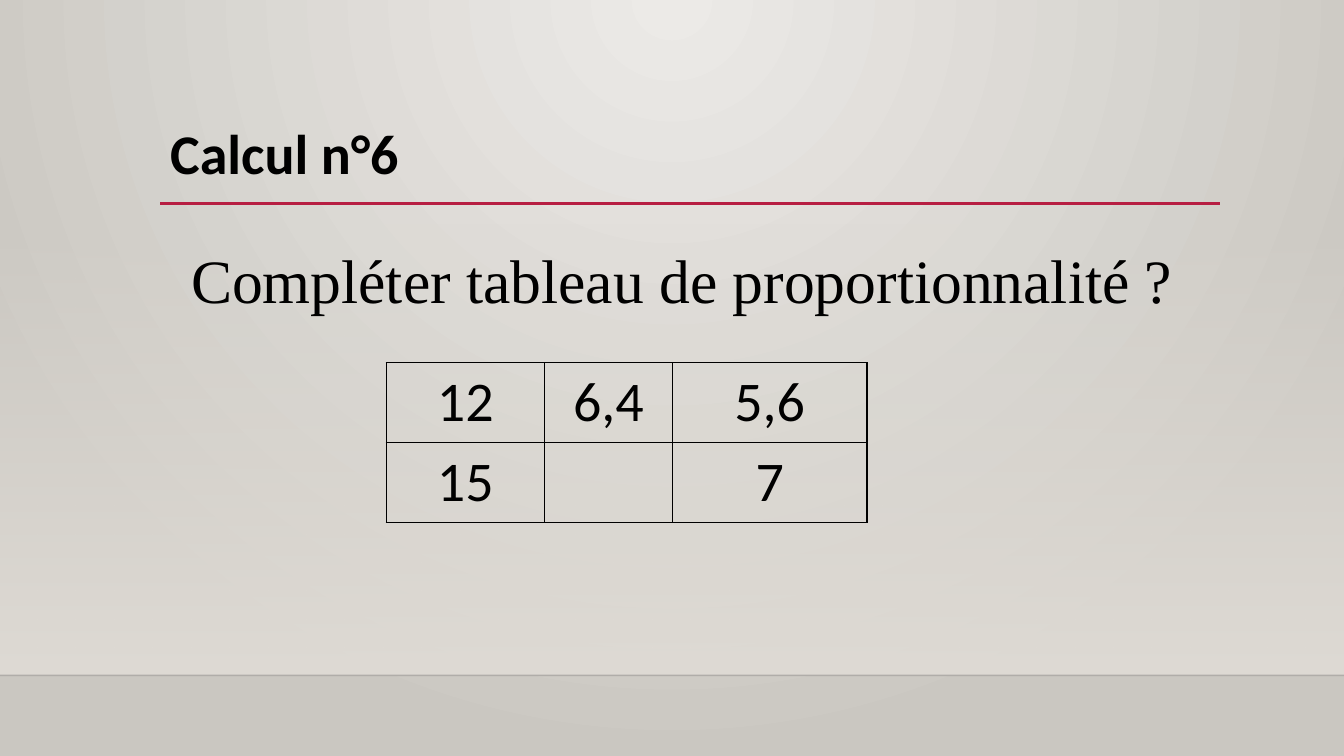
from lxml.etree import SubElement
from pptx import Presentation
from pptx.dml.color import RGBColor
from pptx.enum.shapes import MSO_CONNECTOR as Connector, MSO_SHAPE as Shape
from pptx.enum.text import MSO_ANCHOR as Anchor, MSO_AUTO_SIZE as AutoSize, PP_ALIGN as Align
from pptx.oxml.ns import qn
from pptx.util import Inches, Pt

COLORS = {
    "text": "000000",
    "accent": "B71E42",
    "edge": "000001",
    "glow": "ECEAE7",
    "shade": "CAC7C1",
    "wall": "DFDBD5",
}
PROPORTIONS = [["12", "6,4", "5,6"], ["15", "", "7"]]


def rgb(name):
    return RGBColor.from_string(COLORS[name])


def set_alpha(color_element, percent):
    SubElement(color_element, qn("a:alpha")).set("val", str(percent * 1000))


class CalculationSlide:
    def __init__(self, slide):
        self.slide = slide

    def gradient(self, fill, start, end):
        fill.gradient()
        for stop, name, position in zip(fill.gradient_stops, (start, end), (0, 1)):
            stop.color.rgb = rgb(name)
            stop.position = position

    def background(self, start, end):
        """Fill the slide with a round gradient centred on its top edge."""
        self.gradient(self.slide.background.fill, start, end)
        grad = self.slide.element.find(".//" + qn("a:gradFill"))
        grad.remove(grad.find(qn("a:lin")))
        circle = SubElement(grad, qn("a:path"))
        circle.set("path", "circle")
        center = SubElement(circle, qn("a:fillToRect"))
        for side, value in {"l": 43, "t": 0, "r": 43, "b": 100}.items():
            center.set(side, str(value * 1000))

    def fading_band(self, left, top, width, height, color):
        """Draw a band that is clear at the top and solid at the bottom."""
        band = self.slide.shapes.add_shape(
            Shape.RECTANGLE, Inches(left), Inches(top), Inches(width), Inches(height))
        band.shadow.inherit = False
        band.line.fill.background()
        self.gradient(band.fill, color, color)
        band.fill.gradient_angle = 270
        set_alpha(band.element.spPr.find(".//" + qn("a:srgbClr")), 0)

    def rule(self, left, right, y, color, width, alpha=None):
        line = self.slide.shapes.add_connector(
            Connector.STRAIGHT, Inches(left), Inches(y), Inches(right), Inches(y))
        line.line.color.rgb = rgb(color)
        line.line.width = Pt(width)
        properties = line.element.spPr
        if alpha is not None:
            set_alpha(properties.find(".//" + qn("a:srgbClr")), alpha)
        SubElement(properties, qn("a:effectLst"))

    def run(self, paragraph, text, size, font="Calibri", bold=False):
        run = paragraph.add_run()
        run.text = text
        run.font.size = Pt(size)
        run.font.name = font
        run.font.bold = bold
        run.font.color.rgb = rgb("text")

    def text(self, left, top, width, height, text, size, wrap=True,
             align=Align.LEFT, spacing=1.0, **style):
        box = self.slide.shapes.add_textbox(
            Inches(left), Inches(top), Inches(width), Inches(height))
        frame = box.text_frame
        frame.word_wrap = wrap
        frame.auto_size = AutoSize.NONE if wrap else AutoSize.SHAPE_TO_FIT_TEXT
        paragraph = frame.paragraphs[0]
        paragraph.alignment = align
        paragraph.line_spacing = spacing
        self.run(paragraph, text, size, **style)

    def border(self, cell):
        properties = cell._tc.get_or_add_tcPr()
        for index, side in enumerate(("a:lnL", "a:lnR", "a:lnT", "a:lnB")):
            line = properties.makeelement(qn(side), {"w": str(Pt(1))})
            fill = SubElement(line, qn("a:solidFill"))
            SubElement(fill, qn("a:srgbClr")).set("val", COLORS["text"])
            properties.insert(index, line)

    def table(self, left, top, widths, row_height, values, size):
        table = self.slide.shapes.add_table(
            len(values), len(widths), Inches(left), Inches(top),
            Inches(sum(widths)), Inches(row_height * len(values))).table
        table.first_row = table.horz_banding = False
        for column, width in zip(table.columns, widths):
            column.width = Inches(width)
        for r, row in enumerate(values):
            table.rows[r].height = Inches(row_height)
            for c, value in enumerate(row):
                cell = table.cell(r, c)
                cell.fill.background()
                cell.vertical_anchor = Anchor.MIDDLE
                self.border(cell)
                if value:
                    paragraph = cell.text_frame.paragraphs[0]
                    paragraph.alignment = Align.CENTER
                    self.run(paragraph, value, size)


def main():
    deck = Presentation()
    deck.slide_width, deck.slide_height = Inches(13.33), Inches(7.5)
    page = CalculationSlide(deck.slides.add_slide(deck.slide_layouts[6]))

    page.background("glow", "shade")
    page.fading_band(0, 2.21, 13.33, 4.49, "wall")
    page.rule(0, 13.33, 6.7, "edge", 1, alpha=20)
    page.rule(1.59, 12.1, 2.02, "accent", 2.5)
    page.text(1.59, 1.13, 2.86, 0.77, "Calcul n°6", 40, wrap=False, bold=True)
    page.text(0.53, 2.2, 12.48, 3.77, "Compléter tableau de proportionnalité ?", 44,
              align=Align.CENTER, spacing=1.2, font="Times New Roman")
    page.table(3.83, 3.6, [1.57, 1.27, 1.93], 0.79, PROPORTIONS, 40)

    deck.save("out.pptx")


if __name__ == "__main__":
    main()
